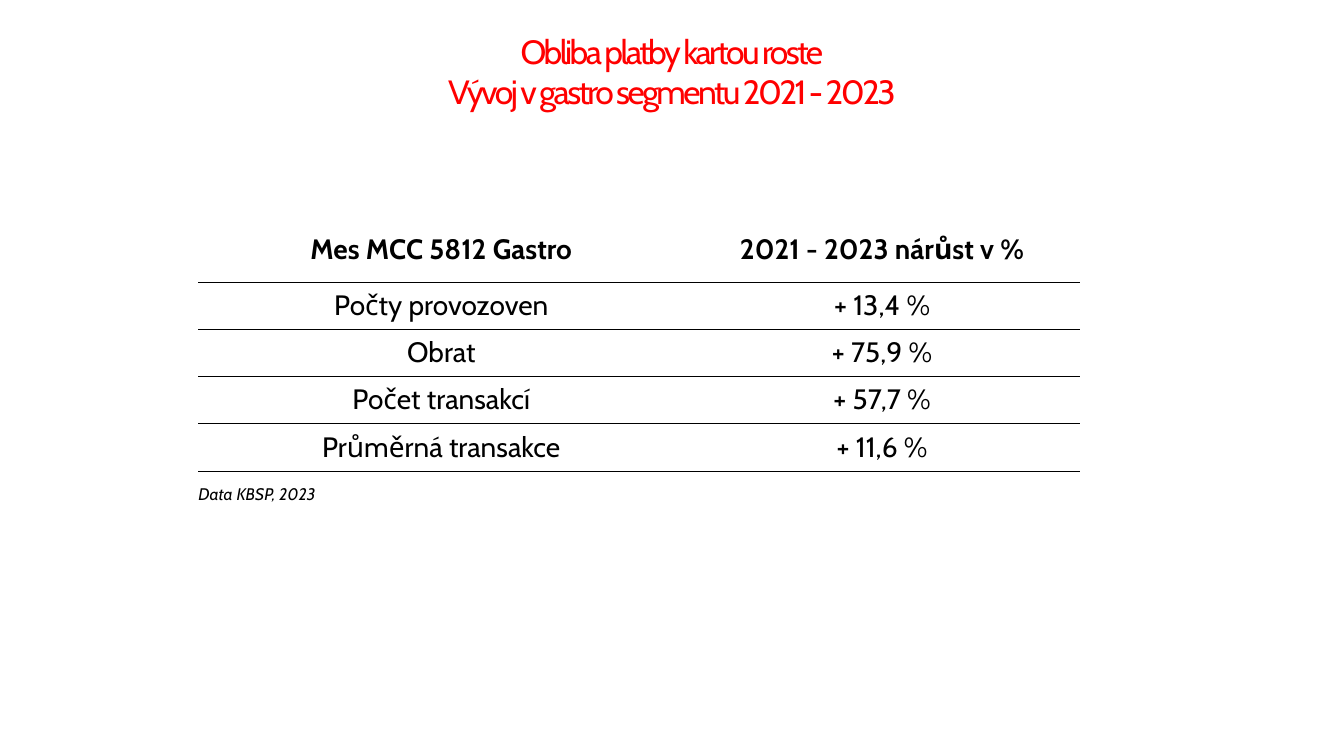
from dataclasses import dataclass

from lxml.etree import SubElement
from pptx import Presentation
from pptx.dml.color import RGBColor
from pptx.enum.text import MSO_ANCHOR, MSO_AUTO_SIZE, PP_ALIGN
from pptx.oxml import parse_xml
from pptx.oxml.ns import nsdecls, qn
from pptx.util import Cm, Pt


@dataclass(frozen=True)
class Theme:
    font: str = "Cabin"
    accent: str = "FF0000"
    ink: str = "000000"
    title_size: float = 24
    table_size: float = 20
    note_size: float = 12
    title_spacing: float = -1.8
    rule: float = 0.25
    table_style: str = "{2D5ABB26-0587-4C30-8999-92F81FD0307C}"


def write(p, text, *, font, size, color, bold=False, italic=False,
          align=PP_ALIGN.CENTER, spacing=None):
    p.alignment = align
    r = p.add_run()
    r.text = text
    r.font.name = font
    r.font.size = Pt(size)
    r.font.bold = bold
    r.font.italic = italic
    r.font.color.rgb = RGBColor.from_string(color)
    if spacing is not None:
        r.font._element.set("spc", str(round(spacing * 100)))


class SlideBuilder:
    def __init__(self, slide, theme):
        self.s = slide
        self.theme = theme

    def title(self, lines, left, top, width, height):
        t = self.theme
        sp = self.s.shapes.title
        sp.left, sp.top, sp.width, sp.height = left, top, width, height
        tf = sp.text_frame
        tf.margin_left = tf.margin_right = tf.margin_top = tf.margin_bottom = 0
        tf.word_wrap = True
        tf.auto_size = MSO_AUTO_SIZE.SHAPE_TO_FIT_TEXT
        tf.vertical_anchor = MSO_ANCHOR.BOTTOM
        for i, line in enumerate(lines):
            p = tf.add_paragraph() if i else tf.paragraphs[0]
            write(p, line, font=t.font, size=t.title_size, color=t.accent,
                  spacing=t.title_spacing)

    def border(self, cell, edge):
        ln = parse_xml(
            f'<a:{edge} {nsdecls("a")} w="{Pt(self.theme.rule)}"><a:solidFill>'
            f'<a:srgbClr val="{self.theme.ink}"/></a:solidFill></a:{edge}>')
        fill = cell._tc.get_or_add_tcPr().find(qn("a:noFill"))
        fill.addprevious(ln)

    def table(self, rows, note, left, top, col_widths, row_heights):
        t = self.theme
        tbl = self.s.shapes.add_table(
            len(row_heights), len(col_widths), left, top,
            sum(col_widths), sum(row_heights)).table
        tbl.first_row = tbl.horz_banding = False
        tbl_pr = tbl._tbl.tblPr
        style = tbl_pr.find(qn("a:tableStyleId"))
        if style is None:
            style = SubElement(tbl_pr, qn("a:tableStyleId"))
        style.text = t.table_style
        for column, width in zip(tbl.columns, col_widths):
            column.width = width
        for row, height in zip(tbl.rows, row_heights):
            row.height = height
        last = len(row_heights) - 1
        for i, row in enumerate(tbl.rows):
            for j, cell in enumerate(row.cells):
                cell.margin_left = cell.margin_right = 0
                cell.margin_top = cell.margin_bottom = Cm(0.13)
                cell.vertical_anchor = MSO_ANCHOR.MIDDLE
                cell.fill.background()
                if i > 0:
                    self.border(cell, "lnT")
                if i < last:
                    self.border(cell, "lnB")
                    write(cell.text_frame.paragraphs[0], rows[i][j], font=t.font,
                          size=t.table_size, color=t.ink, bold=i == 0)
        write(tbl.cell(last, 0).text_frame.paragraphs[0], note, font=t.font,
              size=t.note_size, color=t.ink, italic=True, align=PP_ALIGN.LEFT)


def main():
    prs = Presentation()
    prs.slide_width, prs.slide_height = Cm(33.87), Cm(19.05)
    slide = SlideBuilder(prs.slides.add_slide(prs.slide_layouts[5]), Theme())
    slide.title(
        ["Obliba platby kartou roste", "Vývoj v gastro segmentu 2021 - 2023"],
        Cm(1.73), Cm(0.74), Cm(30.4), Cm(2.06))
    rows = [
        ("Mes MCC 5812 Gastro", "2021 - 2023 nárůst v %"),
        ("Počty provozoven", "+ 13,4 %"),
        ("Obrat", "+ 75,9 %"),
        ("Počet transakcí", "+ 57,7 %"),
        ("Průměrná transakce", "+ 11,6 %"),
    ]
    slide.table(rows, "Data KBSP, 2023", Cm(5), Cm(5.45),
                [Cm(12.24), Cm(9.98)], [Cm(1.65)] + [Cm(1.19)] * len(rows))
    prs.save("out.pptx")


if __name__ == "__main__":
    main()
